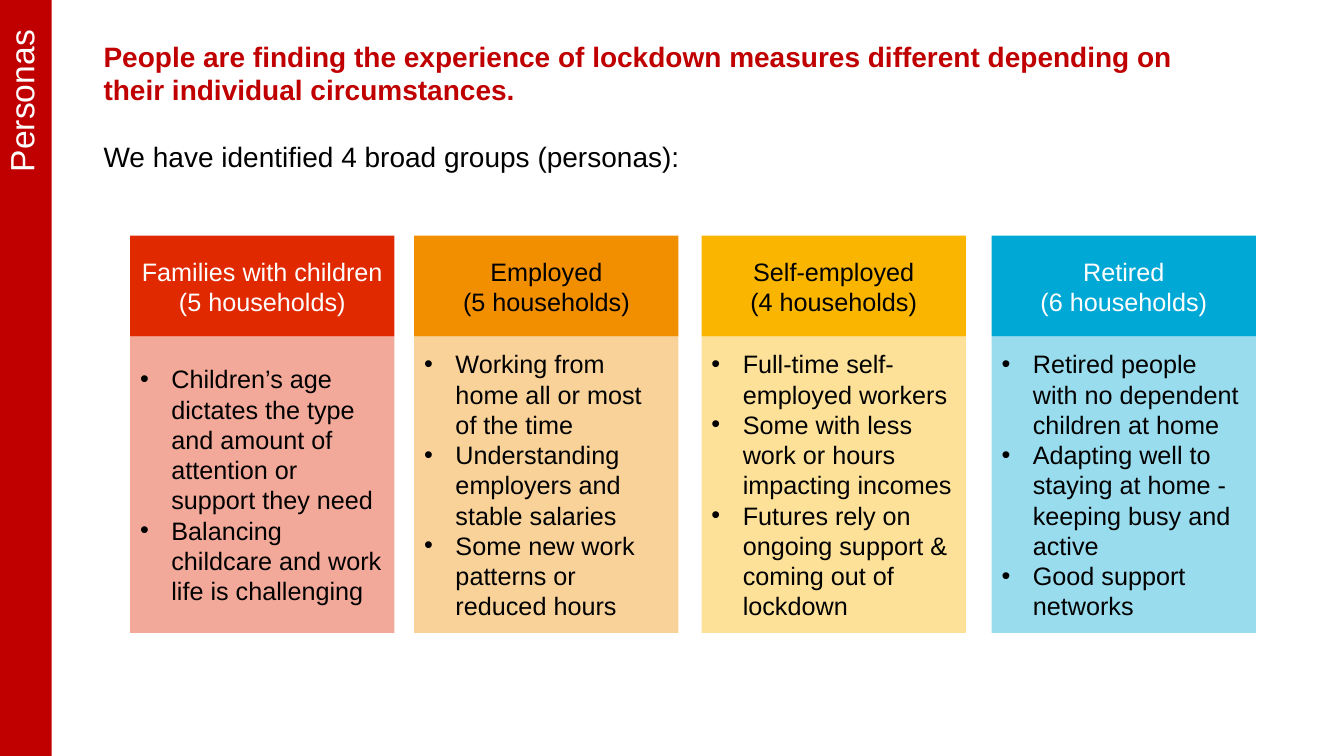
from dataclasses import dataclass

from lxml import etree
from pptx import Presentation
from pptx.dml.color import RGBColor
from pptx.enum import shapes, text
from pptx.oxml import ns
from pptx.util import Cm, Pt


@dataclass(frozen=True)
class Theme:
    """Colours and type sizes of the slide."""
    font: str = "Arial"
    accent: str = "C00000"
    dark: str = "000000"
    light: str = "FFFFFF"
    families: str = "E12900"
    employed: str = "F28F00"
    self_employed: str = "FAB500"
    retired: str = "00A8D6"
    tint: int = 40
    label_size: int = 24
    intro_size: int = 20
    card_size: int = 18


THEME = Theme()

PERSONAS = [
    (3.28, "Families with children", 5, THEME.families, THEME.light, [
        "Children’s age dictates the type and amount of attention or support they need",
        "Balancing childcare and work life is challenging"]),
    (10.44, "Employed", 5, THEME.employed, THEME.dark, [
        "Working from home all or most of the time",
        "Understanding employers and stable salaries",
        "Some new work patterns or reduced hours"]),
    (17.68, "Self-employed", 4, THEME.self_employed, THEME.dark, [
        "Full-time self-employed workers",
        "Some with less work or hours impacting incomes",
        "Futures rely on ongoing support & coming out of lockdown"]),
    (24.99, "Retired", 6, THEME.retired, THEME.light, [
        "Retired people with no dependent children at home",
        "Adapting well to staying at home - keeping busy and active",
        "Good support networks"]),
]


def style_para(para, size, color, align, bold=False):
    """Format every run of a paragraph."""
    para.alignment = align
    for span in para.runs:
        span.font.name = THEME.font
        span.font.size = Pt(size)
        span.font.bold = bold
        span.font.color.rgb = RGBColor.from_string(color)


def add_panel(page, box, fill, lines, size, color, align):
    """Add a filled rectangle with one paragraph per line."""
    panel = page.shapes.add_shape(
        shapes.MSO_SHAPE.RECTANGLE, *(Cm(length) for length in box))
    panel.shadow.inherit = False
    panel.fill.solid()
    panel.fill.fore_color.rgb = RGBColor.from_string(fill)
    panel.line.fill.background()
    frame = panel.text_frame
    frame.word_wrap = True
    frame.vertical_anchor = text.MSO_ANCHOR.MIDDLE
    frame.text = "\n".join(lines)
    for para in frame.paragraphs:
        style_para(para, size, color, align)
    return panel


def set_transparency(panel, percent):
    """Set the opacity of a panel's fill."""
    color = panel.element.spPr.find(".//" + ns.qn("a:srgbClr"))
    etree.SubElement(color, ns.qn("a:alpha"), val=str(percent * 1000))


def add_bullets(panel):
    """Give each paragraph of a panel a hanging bullet."""
    for para in panel.element.iter(ns.qn("a:p")):
        properties = para.get_or_add_pPr()
        properties.set("marL", str(Cm(0.79)))
        properties.set("indent", str(-Cm(0.79)))
        etree.SubElement(properties, ns.qn("a:buFont"), typeface=THEME.font)
        etree.SubElement(properties, ns.qn("a:buChar"), char="•")


def add_sidebar(page, box):
    """Draw the vertical section label."""
    bar = add_panel(page, box, THEME.accent, ["Personas"], THEME.label_size,
                    THEME.light, text.PP_ALIGN.RIGHT)
    frame = bar.text_frame
    frame.margin_left, frame.margin_top = Cm(0.18), Cm(0.76)
    frame.margin_right, frame.margin_bottom = Cm(0.3), Cm(0)
    frame.paragraphs[0].line_spacing = 0.9
    bar.element.txBody.bodyPr.set("vert", "vert270")


def add_intro(page, box):
    """Write the headline and the sentence below it."""
    intro = page.shapes.add_textbox(*(Cm(length) for length in box))
    frame = intro.text_frame
    frame.word_wrap = True
    frame.text = ("People are finding the experience of lockdown measures different "
                  "depending on their individual circumstances.\n"
                  "We have identified 4 broad groups (personas):")
    headline, lead = frame.paragraphs
    style_para(headline, THEME.intro_size, THEME.accent, text.PP_ALIGN.LEFT, True)
    style_para(lead, THEME.intro_size, THEME.dark, text.PP_ALIGN.LEFT)
    lead.space_before = Pt(24)


def add_persona(page, box, title, households, fill, title_color, points):
    """Draw one persona as a header above a tinted list."""
    left, top, width, height = box
    header_height = 2.54
    body = add_panel(
        page, (left, top + header_height, width, height - header_height),
        fill, points, THEME.card_size, THEME.dark, text.PP_ALIGN.LEFT)
    set_transparency(body, THEME.tint)
    add_bullets(body)
    add_panel(page, (left, top, width, header_height), fill,
              [title, f"({households} households)"], THEME.card_size,
              title_color, text.PP_ALIGN.CENTER)


def main():
    """Build the personas slide and save it."""
    deck = Presentation()
    deck.slide_width, deck.slide_height = Cm(33.87), Cm(19.05)
    page = deck.slides.add_slide(deck.slide_layouts[6])
    add_sidebar(page, (0, 0, 1.3, 19.05))
    add_intro(page, (2.36, 0.86, 28.12, 3.68))
    for left, *persona in PERSONAS:
        add_persona(page, (left, 5.94, 6.66, 10.01), *persona)
    deck.save("out.pptx")


if __name__ == "__main__":
    main()
